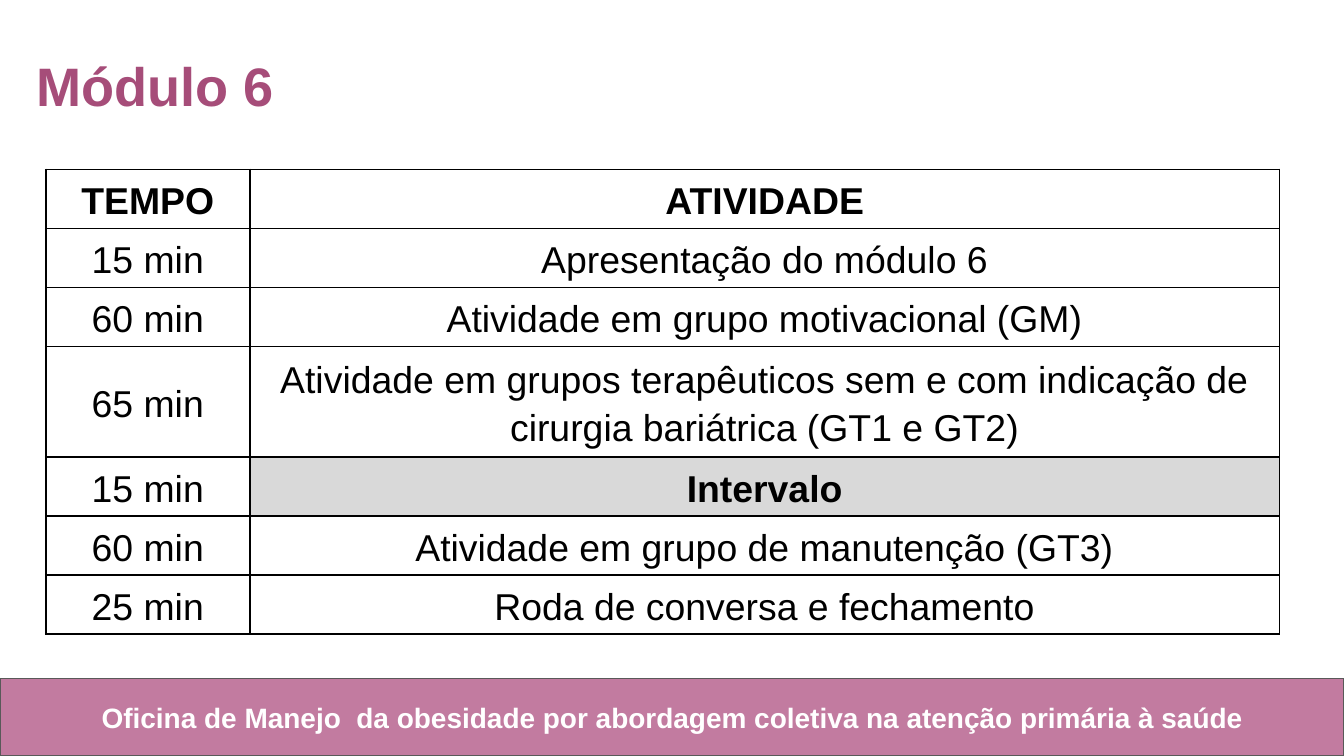
from dataclasses import dataclass

from lxml import etree
from pptx import Presentation
from pptx.dml.color import RGBColor as Rgb
from pptx.enum import shapes as kinds, text as tx
from pptx.oxml import ns
from pptx.util import Inches, Pt


@dataclass(frozen=True)
class Theme:
    font: str = "Arial"
    plum: str = "A64D79"
    pink: str = "C27BA0"
    edge: str = "595959"
    ink: str = "000000"
    white: str = "FFFFFF"
    gray: str = "D9D9D9"
    head: int = 29
    cell: int = 20
    foot: int = 15


theme = Theme()
ROWS = [
    ("TEMPO", "ATIVIDADE"),
    ("15 min", "Apresentação do módulo 6"),
    ("60 min", "Atividade em grupo motivacional (GM)"),
    ("65 min", "Atividade em grupos terapêuticos sem e com indicação de "
               "cirurgia bariátrica (GT1 e GT2)"),
    ("15 min", "Intervalo"),
    ("60 min", "Atividade em grupo de manutenção (GT3)"),
    ("25 min", "Roda de conversa e fechamento"),
]
TALL, BREAK = 3, 4


def write(frame, words, size, color, bold=True, align=tx.PP_ALIGN.CENTER, space=1.15):
    frame.text = words
    para = frame.paragraphs[0]
    para.alignment, para.line_spacing = align, space
    font = para.runs[0].font
    font.name, font.size, font.bold = theme.font, Pt(size), bold
    font.color.rgb = Rgb.from_string(color)


def pad(item, gap):
    item.margin_left = item.margin_right = gap
    item.margin_top = item.margin_bottom = gap


def paint(fill, color):
    fill.solid()
    fill.fore_color.rgb = Rgb.from_string(color)


def border(cell):
    props = cell._tc.get_or_add_tcPr()
    for spot, side in enumerate(("lnL", "lnR", "lnT", "lnB")):
        line = etree.Element(ns.qn("a:" + side), w=str(Pt(1)))
        fill = etree.SubElement(line, ns.qn("a:solidFill"))
        etree.SubElement(fill, ns.qn("a:srgbClr"), val=theme.ink)
        props.insert(spot, line)


def footer(slide, x, y, w, h):
    bar = slide.shapes.add_shape(
        kinds.MSO_SHAPE.RECTANGLE, Inches(x), Inches(y), Inches(w), Inches(h))
    bar.shadow.inherit = False
    paint(bar.fill, theme.pink)
    paint(bar.line.fill, theme.edge)
    bar.line.width = Pt(0.75)
    note = slide.shapes.add_textbox(
        Inches(x + 0.34), Inches(y + 0.06), Inches(w - 0.67), Inches(0.45))
    frame = note.text_frame
    frame.word_wrap = True
    frame.auto_size = tx.MSO_AUTO_SIZE.SHAPE_TO_FIT_TEXT
    pad(frame, Inches(0.1))
    write(frame, "Oficina de Manejo  da obesidade por abordagem coletiva "
                 "na atenção primária à saúde", theme.foot, theme.white, space=1.0)


def heading(slide, x, y, w, h):
    title = slide.shapes.title
    title.left, title.top = Inches(x), Inches(y)
    title.width, title.height = Inches(w), Inches(h)
    frame = title.text_frame
    frame.word_wrap = True
    frame.auto_size = tx.MSO_AUTO_SIZE.NONE
    frame.vertical_anchor = tx.MSO_ANCHOR.TOP
    pad(frame, Inches(0.1))
    write(frame, "Módulo 6", theme.head, theme.plum, align=tx.PP_ALIGN.LEFT)


def agenda(slide, x, y, w, h):
    grid = slide.shapes.add_table(
        len(ROWS), 2, Inches(x), Inches(y), Inches(w), Inches(h)).table
    grid.first_row = grid.horz_banding = False
    slim = 1.52
    grid.columns[0].width = Inches(slim)
    grid.columns[1].width = Inches(w - slim)
    for r, row in enumerate(ROWS):
        grid.rows[r].height = Inches(0.45 if r == TALL else 0.25)
        for c, words in enumerate(row):
            cell = grid.cell(r, c)
            pause = (r, c) == (BREAK, 1)
            pad(cell, Pt(2))
            cell.vertical_anchor = tx.MSO_ANCHOR.MIDDLE
            write(cell.text_frame, words, theme.cell, theme.ink, r == 0 or pause)
            paint(cell.fill, theme.gray if pause else theme.white)
            border(cell)


def main():
    deck = Presentation()
    deck.slide_width = Inches(10)
    deck.slide_height = deck.slide_width * 9 // 16
    slide = deck.slides.add_slide(deck.slide_layouts[5])
    footer(slide, 0, 5.05, 10, 0.57)
    heading(slide, 0.17, 0.22, 7.57, 0.74)
    agenda(slide, 0.34, 1.26, 9.18, 1.95)
    deck.save("out.pptx")


if __name__ == "__main__":
    main()
